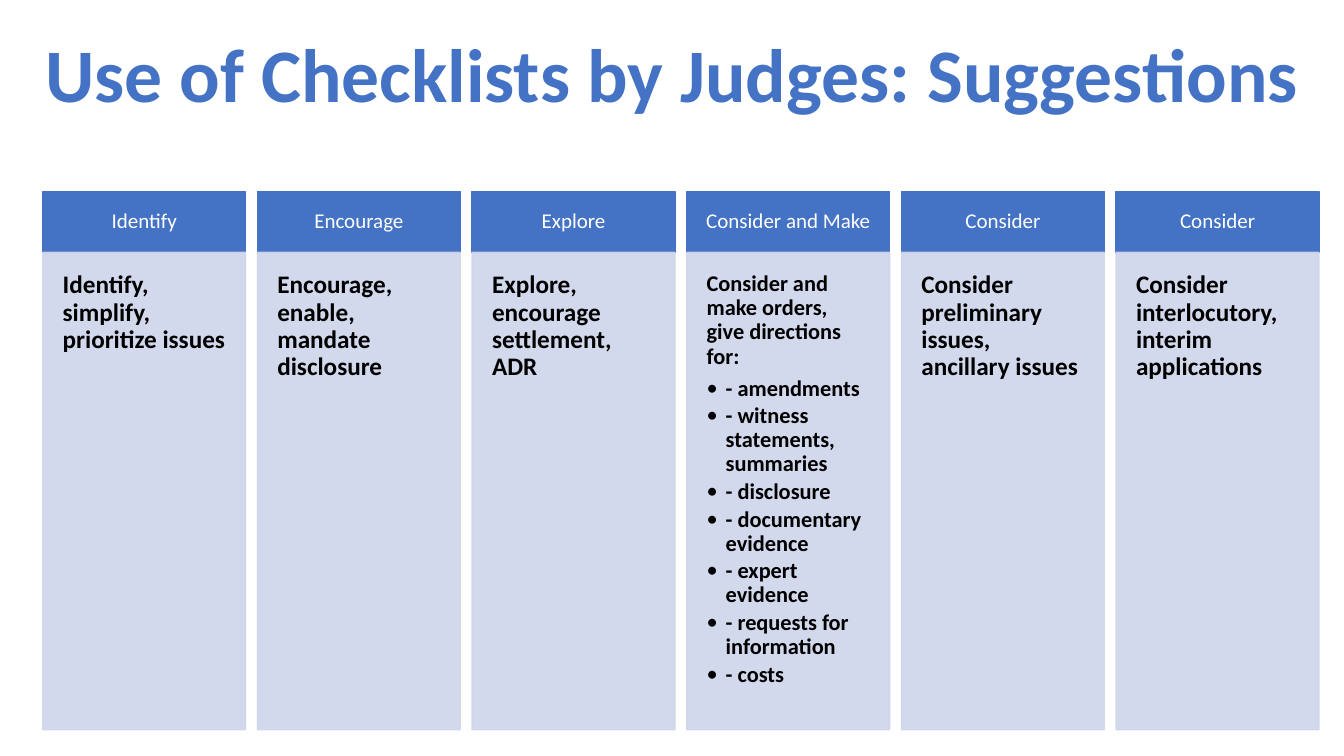
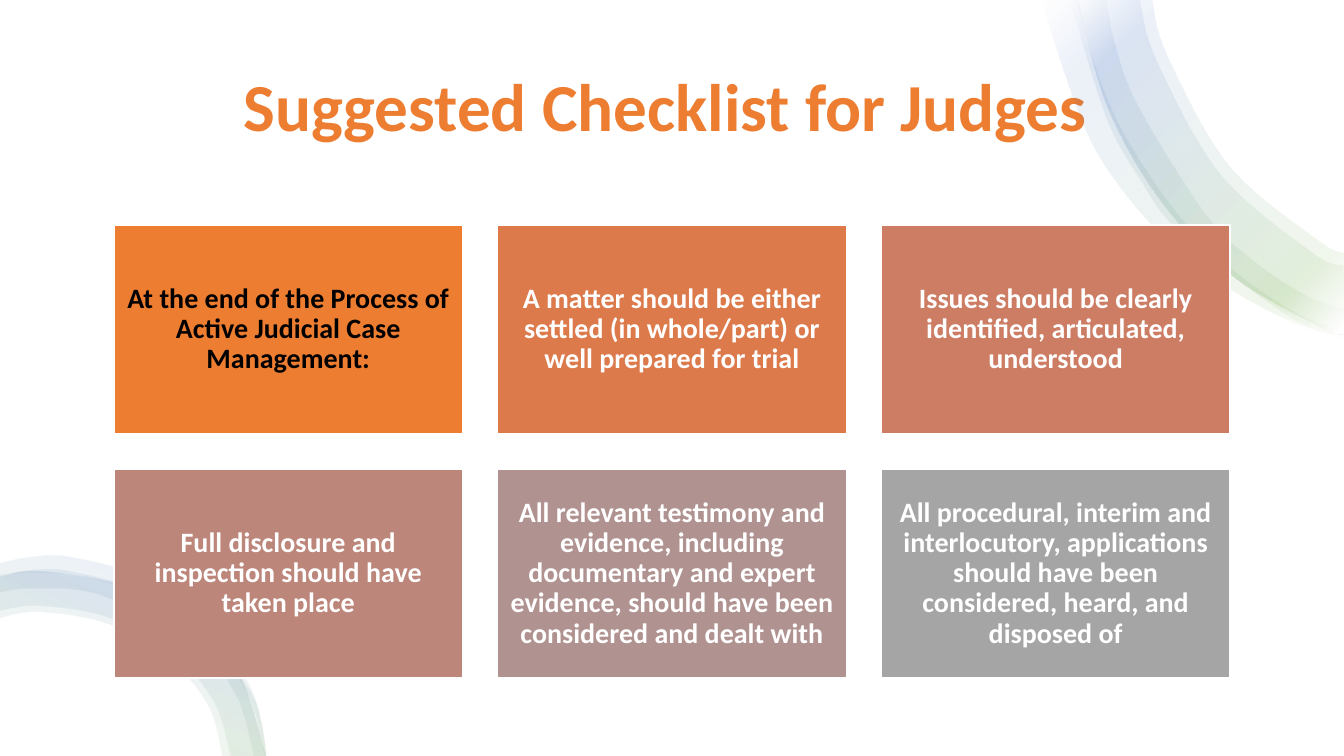
from lxml.etree import SubElement
from pptx import Presentation
from pptx.dml.color import RGBColor
from pptx.enum.shapes import MSO_SHAPE
from pptx.enum.text import MSO_ANCHOR, MSO_AUTO_SIZE, PP_ALIGN
from pptx.oxml.ns import qn
from pptx.util import Cm, Pt

FONT = "Calibri"
BLUE = RGBColor(0x44, 0x72, 0xC4)
PALE_BLUE = RGBColor(0xCF, 0xD5, 0xEA)
ORANGE = RGBColor(0xED, 0x7D, 0x31)
GREEN = RGBColor(0x70, 0xAD, 0x47)
WHITE = RGBColor(0xFF, 0xFF, 0xFF)
BLACK = RGBColor(0x00, 0x00, 0x00)

SUGGESTIONS_TITLE = "Use of Checklists by Judges: Suggestions"
SUGGESTIONS = [
    ("Identify", "Identify, simplify, prioritize issues", []),
    ("Encourage", "Encourage, enable, mandate disclosure", []),
    ("Explore", "Explore, encourage settlement, ADR", []),
    ("Consider and Make", "Consider and make orders, give directions for:", [
        "- amendments",
        "- witness statements, summaries",
        "- disclosure",
        "- documentary evidence",
        "- expert evidence",
        "- requests for information",
        "- costs",
    ]),
    ("Consider", "Consider preliminary issues, ancillary issues", []),
    ("Consider", "Consider interlocutory, interim applications", []),
]

CHECKLIST_TITLE = "Suggested Checklist for Judges"
CHECKLIST = [
    ("At the end of the Process of Active Judicial Case Management:", ORANGE, BLACK),
    ("A matter should be either settled (in whole/part) or well prepared for trial",
     RGBColor(0xDC, 0x7A, 0x4B), WHITE),
    ("Issues should be clearly identified, articulated, understood",
     RGBColor(0xCC, 0x7D, 0x64), WHITE),
    ("Full disclosure and inspection should have taken place",
     RGBColor(0xBD, 0x86, 0x7B), WHITE),
    ("All relevant testimony and evidence, including documentary and expert evidence, "
     "should have been considered and dealt with", RGBColor(0xB0, 0x93, 0x91), WHITE),
    ("All procedural, interim and interlocutory, applications should have been "
     "considered, heard, and disposed of", RGBColor(0xA5, 0xA5, 0xA5), WHITE),
]

RIBBON_UNIT = Cm(2.54)
RIBBON_STOPS = [(2, WHITE), (16, GREEN), (85, BLUE), (100, WHITE)]
TOP_EDGE = [(10.69, 0), (10.99, 1.07), (11.52, 2), (12.23, 2.74), (13.09, 3.24), (13.33, 3.32)]
BOTTOM_EDGE = [(2.63, 7.5), (2.36, 6.69), (1.85, 6.16), (1.17, 5.8), (0.4, 5.67), (0, 5.72)]
TOP_RIBBONS = [
    ([(10.38, 0), (10.41, 0.26), (10.78, 1.31), (11.16, 1.92), (11.65, 2.45),
      (12.21, 2.87), (12.82, 3.19), (13.33, 3.35)],
     [(13.33, 3.28), (12.86, 3.1), (12.3, 2.73), (11.81, 2.27), (11.4, 1.73),
      (11.06, 1.15), (10.82, 0.52), (10.7, 0)]),
    (TOP_EDGE, [(13.33, 2.51), (13.07, 2.38), (12.19, 1.64), (11.58, 0.55), (11.43, 0)]),
    ([(10.65, 0), (10.68, 0.2), (10.99, 1.19), (11.32, 1.79), (11.73, 2.33),
      (12.79, 3.14), (13.33, 3.33)],
     [(13.33, 3.08), (12.9, 2.9), (12.39, 2.55), (11.95, 2.11), (11.29, 1.04),
      (11.07, 0.44), (10.98, 0)]),
    (TOP_EDGE, [(13.33, 2.64), (13.01, 2.5), (12.1, 1.72), (11.47, 0.59), (11.31, 0)]),
]
BOTTOM_RIBBONS = [
    (BOTTOM_EDGE, [(0, 6.13), (0.4, 6.07), (1.07, 6.19), (1.66, 6.52), (2.06, 7), (2.2, 7.5)]),
    (BOTTOM_EDGE, [(0, 6.06), (0.4, 6.01), (1.09, 6.13), (1.7, 6.47), (2.12, 6.97), (2.28, 7.5)]),
    ([(2.63, 7.5), (2.59, 7.19), (2.47, 6.85), (2.03, 6.27), (1.42, 5.87),
      (0.69, 5.67), (0.31, 5.66), (0, 5.71)],
     [(0, 5.88), (0.33, 5.84), (1.01, 5.91), (1.92, 6.39), (2.34, 6.91), (2.51, 7.5)]),
    ([(2.64, 7.5), (2.5, 6.87), (2.1, 6.23), (1.48, 5.75), (0.71, 5.53),
      (0.31, 5.53), (0, 5.59)],
     [(0, 5.72), (0.32, 5.68), (0.87, 5.73), (1.39, 5.91), (2, 6.31),
      (2.45, 6.89), (2.62, 7.5)]),
]


def set_values(target, values):
    for name, value in values.items():
        setattr(target, name, value)


def format_paragraph(paragraph, text, size, color, bold, align, after=0):
    paragraph.text = text
    set_values(paragraph, {"alignment": align, "line_spacing": 0.9,
                           "space_before": Pt(0), "space_after": Pt(size * after)})
    font = paragraph.runs[0].font
    set_values(font, {"name": FONT, "size": Pt(size), "bold": bold})
    font.color.rgb = color


def add_titled_slide(presentation, text, size, color, box):
    slide = presentation.slides.add_slide(presentation.slide_layouts[5])
    title = slide.shapes.title
    set_values(title, dict(zip(("left", "top", "width", "height"), box)))
    set_values(title.text_frame, {"word_wrap": True, "auto_size": MSO_AUTO_SIZE.NONE,
                                  "vertical_anchor": MSO_ANCHOR.MIDDLE})
    format_paragraph(title.text_frame.paragraphs[0], text, size, color, True, PP_ALIGN.CENTER)
    return slide


def add_rectangle(slide, box, fill):
    shape = slide.shapes.add_shape(MSO_SHAPE.RECTANGLE, *box)
    shape.shadow.inherit = False
    shape.fill.solid()
    shape.fill.fore_color.rgb = fill
    shape.line.fill.background()
    return shape


def add_box(slide, box, fill, line, inset, text, size, color,
            bold=True, align=PP_ALIGN.CENTER, anchor=MSO_ANCHOR.MIDDLE):
    shape = add_rectangle(slide, box, fill)
    shape.line.color.rgb = line
    shape.line.width = Pt(1)
    margins = {f"margin_{side}": inset for side in ("left", "top", "right", "bottom")}
    set_values(shape.text_frame, {"word_wrap": True, "vertical_anchor": anchor, **margins})
    format_paragraph(shape.text_frame.paragraphs[0], text, size, color, bold, align, 0.35)
    return shape


def set_opacity(shape, percent):
    for color in shape.element.spPr.iter(qn("a:srgbClr")):
        SubElement(color, qn("a:alpha"), val=str(percent * 1000))


def add_bullet(text_frame, text, size):
    paragraph = text_frame.add_paragraph()
    format_paragraph(paragraph, text, size, BLACK, True, PP_ALIGN.LEFT, 0.15)
    paragraph.level = 1
    properties = paragraph._p.get_or_add_pPr()
    properties.set("marL", str(Cm(0.48)))
    properties.set("indent", str(-Cm(0.48)))
    SubElement(properties, qn("a:buFont"), typeface=FONT)
    SubElement(properties, qn("a:buChar"), char="•")


def curve_segments(points):
    padded = [points[0], *points, points[-1]]
    for before, start, end, after in zip(padded, padded[1:], padded[2:], padded[3:]):
        leaving = tuple(b + (c - a) / 6 for a, b, c in zip(before, start, end))
        arriving = tuple(c - (d - b) / 6 for b, c, d in zip(start, end, after))
        yield leaving, arriving, end


def draw_curves(ribbon, outer, inner):
    outline = next(ribbon.element.spPr.iter(qn("a:path")))
    for child in list(outline)[1:]:
        outline.remove(child)

    def add_command(name, points):
        command = SubElement(outline, qn(name))
        for x, y in points:
            SubElement(command, qn("a:pt"), x=str(round(x * RIBBON_UNIT) - ribbon.left),
                       y=str(round(y * RIBBON_UNIT) - ribbon.top))

    for segment in curve_segments(outer):
        add_command("a:cubicBezTo", segment)
    add_command("a:lnTo", inner[:1])
    for segment in curve_segments(inner):
        add_command("a:cubicBezTo", segment)
    SubElement(outline, qn("a:close"))


def add_ribbon(slide, outer, inner, angle):
    points = [(round(x * RIBBON_UNIT), round(y * RIBBON_UNIT)) for x, y in outer + inner]
    builder = slide.shapes.build_freeform(*points[0])
    builder.add_line_segments(points[1:], close=True)
    ribbon = builder.convert_to_shape()
    draw_curves(ribbon, outer, inner)
    ribbon.shadow.inherit = False
    ribbon.line.fill.background()
    ribbon.fill.gradient()
    gradient = ribbon.element.spPr.find(qn("a:gradFill"))
    for child in list(gradient):
        gradient.remove(child)
    stops = SubElement(gradient, qn("a:gsLst"))
    for position, color in RIBBON_STOPS:
        stop = SubElement(stops, qn("a:gs"), pos=str(position * 1000))
        SubElement(stop, qn("a:srgbClr"), val=str(color))
    SubElement(gradient, qn("a:lin"), ang=str(angle * 60000), scaled="0")
    set_opacity(ribbon, 10)


def build_suggestions(presentation):
    slide = add_titled_slide(presentation, SUGGESTIONS_TITLE, 54, BLUE,
                             (Cm(0.61), Cm(0.43), Cm(32.66), Cm(3.07)))
    left, pitch, width = Cm(1.08), Cm(5.41), Cm(5.11)
    top, header_height, body_height = Cm(4.83), Cm(1.53), Cm(12.03)
    for index, (heading, text, bullets) in enumerate(SUGGESTIONS):
        x = left + index * pitch
        add_box(slide, (x, top, width, header_height), BLUE, BLUE, Cm(0.41),
                heading, 15, WHITE, bold=False)
        size = 16 if bullets else 18
        body = add_box(slide, (x, top + header_height, width, body_height),
                       PALE_BLUE, PALE_BLUE, Cm(0.5), text, size, BLACK,
                       align=PP_ALIGN.LEFT, anchor=MSO_ANCHOR.TOP)
        set_opacity(body, 90)
        for bullet in bullets:
            add_bullet(body.text_frame, bullet, size)


def build_checklist(presentation):
    slide = add_titled_slide(presentation, CHECKLIST_TITLE, 48, ORANGE,
                             (Cm(2.08), Cm(1.12), Cm(29.39), Cm(3.3)))
    page = (0, 0, presentation.slide_width, presentation.slide_height)
    backdrop = add_rectangle(slide, page, WHITE)
    slide.shapes.title.element.addprevious(backdrop.element)
    for ribbons, angle in ((TOP_RIBBONS, 225), (BOTTOM_RIBBONS, 290)):
        for outer, inner in ribbons:
            add_ribbon(slide, outer, inner, angle)
    left, top, width, height, gap = Cm(2.87), Cm(5.67), Cm(8.79), Cm(5.27), Cm(0.88)
    for index, (text, fill, color) in enumerate(CHECKLIST):
        row, column = divmod(index, 3)
        box = (left + column * (width + gap), top + row * (height + gap), width, height)
        add_box(slide, box, fill, WHITE, Cm(0.2), text, 20, color)


def main():
    presentation = Presentation()
    presentation.slide_width = Cm(33.87)
    presentation.slide_height = Cm(19.05)
    build_suggestions(presentation)
    build_checklist(presentation)
    presentation.save("out.pptx")


if __name__ == "__main__":
    main()
